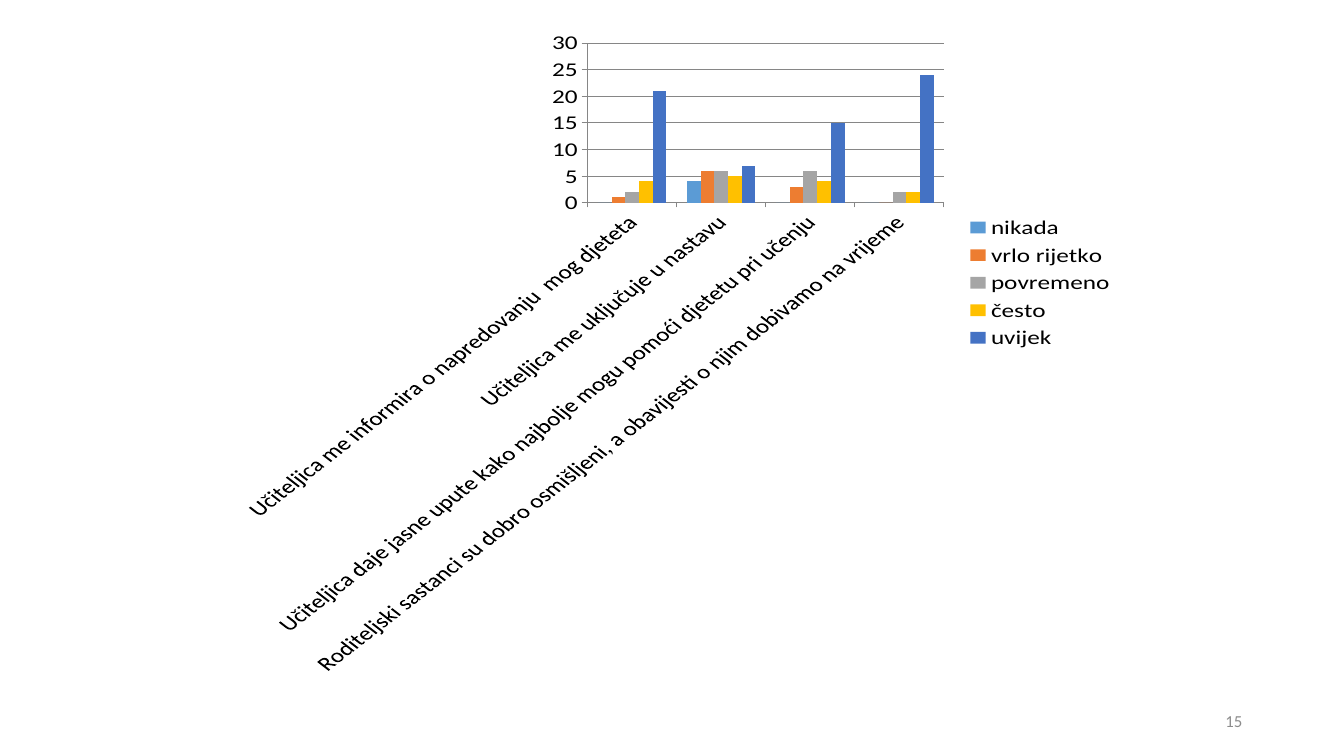
from pptx import Presentation
from pptx.chart.data import CategoryChartData
from pptx.dml.color import RGBColor
from pptx.enum.chart import XL_CHART_TYPE as ChartType, XL_LEGEND_POSITION as LegendPosition
from pptx.enum.chart import XL_TICK_MARK as TickMark
from pptx.enum.text import MSO_ANCHOR as Anchor, PP_ALIGN as Align
from pptx.util import Inches, Pt

FONT = "Calibri"
BLACK = RGBColor(0x00, 0x00, 0x00)
GRAY = RGBColor(0x8C, 0x8C, 0x8C)
AXIS_GRAY = RGBColor(0x86, 0x86, 0x86)

STATEMENTS = [
    "Učiteljica me informira o napredovanju  mog djeteta",
    "Učiteljica me uključuje u nastavu",
    "Učiteljica daje jasne upute kako najbolje mogu pomoći djetetu pri učenju",
    "Roditeljski sastanci su dobro osmišljeni, a obavijesti o njim dobivamo na vrijeme",
]
ANSWERS = [
    ("nikada", (0, 4, 0, 0), RGBColor(0x5B, 0x9B, 0xD5)),
    ("vrlo rijetko", (1, 6, 3, 0), RGBColor(0xED, 0x7D, 0x31)),
    ("povremeno", (2, 6, 6, 2), RGBColor(0xA5, 0xA5, 0xA5)),
    ("često", (4, 5, 4, 2), RGBColor(0xFF, 0xC0, 0x00)),
    ("uvijek", (21, 7, 15, 24), RGBColor(0x44, 0x72, 0xC4)),
]


def set_format(target, values):
    for name, value in values.items():
        setattr(target, name, value)


def set_font(font, size, color):
    set_format(font, {"name": FONT, "size": Pt(size)})
    font.color.rgb = color


def set_line(line):
    line.width = Pt(0.75)
    line.color.rgb = AXIS_GRAY


def add_answer_chart(slide, left, top, width, height):
    data = CategoryChartData()
    data.categories = STATEMENTS
    for name, values, color in ANSWERS:
        data.add_series(name, values)
    chart = slide.shapes.add_chart(
        ChartType.COLUMN_CLUSTERED, left, top, width, height, data
    ).chart
    set_format(chart, {"has_title": False, "has_legend": True})
    set_font(chart.font, 18, BLACK)
    set_format(chart.legend, {"position": LegendPosition.RIGHT, "include_in_layout": False})

    plot = chart.plots[0]
    set_format(plot, {"gap_width": 150, "overlap": 0, "vary_by_categories": False})
    for series, (name, values, color) in zip(plot.series, ANSWERS):
        series.format.fill.solid()
        series.format.fill.fore_color.rgb = color

    for axis in (chart.category_axis, chart.value_axis):
        set_format(axis, {"major_tick_mark": TickMark.OUTSIDE, "minor_tick_mark": TickMark.NONE})
        set_line(axis.format.line)
    chart.value_axis.has_major_gridlines = True
    set_line(chart.value_axis.major_gridlines.format.line)


def add_page_number(slide, left, top, width, height, number):
    frame = slide.shapes.add_textbox(left, top, width, height).text_frame
    set_format(frame, {"word_wrap": True, "vertical_anchor": Anchor.MIDDLE})
    paragraph = frame.paragraphs[0]
    set_format(paragraph, {"text": number, "alignment": Align.RIGHT})
    set_font(paragraph.runs[0].font, 12, GRAY)


def main():
    presentation = Presentation()
    set_format(presentation, {"slide_width": Inches(13.33), "slide_height": Inches(7.5)})
    slide = presentation.slides.add_slide(presentation.slide_layouts[6])
    add_answer_chart(slide, Inches(2.17), Inches(0.31), Inches(9), Inches(6.39))
    add_page_number(slide, Inches(9.42), Inches(6.95), Inches(3), Inches(0.4), "15")
    presentation.save("out.pptx")


if __name__ == "__main__":
    main()
